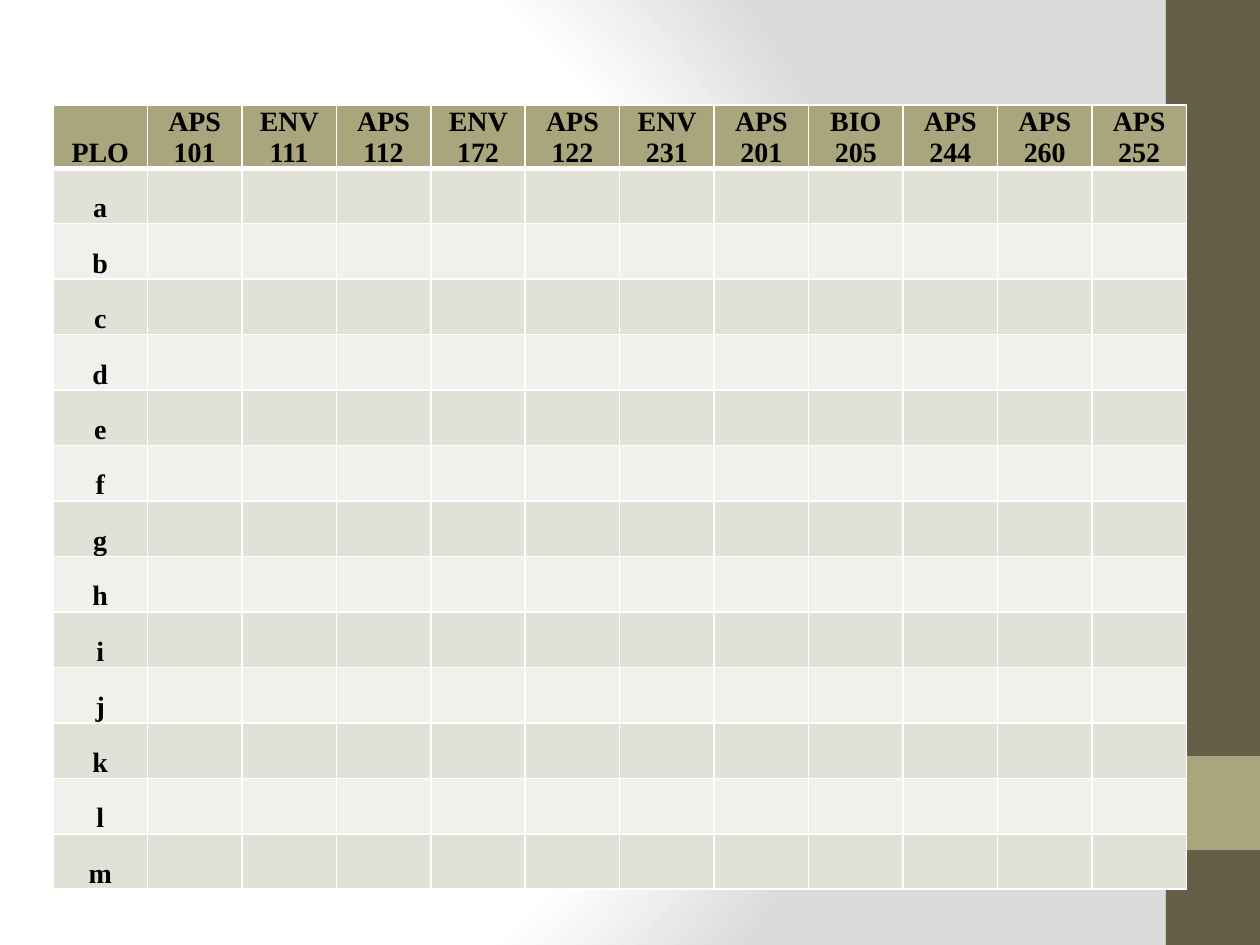
import pptx
import pptx.dml.color
import pptx.enum.shapes
import pptx.enum.text
import pptx.oxml
import pptx.oxml.ns
import pptx.util
from dataclasses import dataclass

PX = 914400 // 126  # EMU in one px


def px(n):
    return pptx.util.Emu(round(n * PX))


def rgb(value):
    return pptx.dml.color.RGBColor.from_string(value)


@dataclass(frozen=True)
class Theme:
    font: str = "Times New Roman"
    size: int = 16
    text: str = "000000"
    white: str = "FFFFFF"
    shade: str = "DADADA"
    sidebar: str = "675E47"
    accent: str = "A9A57C"
    bands: tuple = ("E2E1D7", "F1F0EC")
    rule: int = 1
    header_rule: int = 3


def write(tf, text, *, font, size, color, bold=False,
          align=pptx.enum.text.PP_ALIGN.CENTER):
    p = tf.paragraphs[0]
    p.alignment = align
    r = p.add_run()
    r.text = text
    r.font.name = font
    r.font.size = pptx.util.Pt(size)
    r.font.bold = bold
    r.font.color.rgb = rgb(color)


class SlideBuilder:
    def __init__(self, slide, theme):
        self.s = slide
        self.theme = theme

    def background(self, stops):
        """Radial gradient; stops are (percent, colour) pairs."""
        self.s.background.fill.gradient()
        old = self.s.element.find(".//" + pptx.oxml.ns.qn("a:gradFill"))
        gs = "".join(f'<a:gs pos="{pos * 1000}"><a:srgbClr val="{color}"/></a:gs>'
                     for pos, color in stops)
        new = pptx.oxml.parse_xml(
            f'<a:gradFill {pptx.oxml.ns.nsdecls("a")} rotWithShape="1">'
            f'<a:gsLst>{gs}</a:gsLst><a:path path="circle">'
            '<a:fillToRect l="20000" t="50000" r="100000" b="50000"/>'
            '</a:path></a:gradFill>')
        old.getparent().replace(old, new)

    def rect(self, x, y, w, h, color):
        sp = self.s.shapes.add_shape(
            pptx.enum.shapes.MSO_SHAPE.RECTANGLE, px(x), px(y), px(w), px(h))
        sp.shadow.inherit = False
        sp.fill.solid()
        sp.fill.fore_color.rgb = rgb(color)
        sp.line.fill.background()

    def borders(self, cell, **widths):
        """Border widths in points, keyed by side: L, R, T, B."""
        tc_pr = cell._tc.get_or_add_tcPr()
        for i, side in enumerate("LRTB"):
            width = pptx.util.Pt(widths.get(side, self.theme.rule))
            tc_pr.insert(i, pptx.oxml.parse_xml(
                f'<a:ln{side} {pptx.oxml.ns.nsdecls("a")} w="{width}"><a:solidFill>'
                f'<a:srgbClr val="{self.theme.white}"/></a:solidFill></a:ln{side}>'))

    def cell(self, cell, text, color, **widths):
        t = self.theme
        cell.fill.solid()
        cell.fill.fore_color.rgb = rgb(color)
        cell.vertical_anchor = pptx.enum.text.MSO_ANCHOR.BOTTOM
        cell.margin_left = cell.margin_right = cell.margin_top = px(1)
        cell.margin_bottom = 0
        if text:
            write(cell.text_frame, text, font=t.font, size=t.size,
                  color=t.text, bold=True)
        self.borders(cell, **widths)

    def table(self, x, y, w, header_h, body_h, header, labels):
        t = self.theme
        n_rows, n_cols = len(labels) + 1, len(header)
        table = self.s.shapes.add_table(
            n_rows, n_cols, px(x), px(y), px(w), px(header_h + body_h)).table
        table.first_row = table.horz_banding = False
        for col in table.columns:
            col.width = px(w) // n_cols
        for row in table.rows:
            row.height = px(body_h) // len(labels)
        table.rows[0].height = px(header_h)

        for c, text in enumerate(header):
            self.cell(table.cell(0, c), text, t.accent, B=t.header_rule)
        for r, label in enumerate(labels):
            top = t.rule if r else t.header_rule
            for c in range(n_cols):
                self.cell(table.cell(r + 1, c), "" if c else label,
                          t.bands[r % 2], T=top)


def main():
    prs = pptx.Presentation()
    prs.slide_width, prs.slide_height = px(1260), px(945)
    theme = Theme()
    slide = SlideBuilder(prs.slides.add_slide(prs.slide_layouts[6]), theme)

    # Background and side bar
    slide.background([(0, theme.white), (75, theme.white), (100, theme.shade)])
    slide.rect(1166, 0, 94, 945, theme.sidebar)
    slide.rect(1166, 756, 94, 94, theme.accent)

    # Course matrix
    courses = ["APS 101", "ENV 111", "APS 112", "ENV 172", "APS 122", "ENV 231",
               "APS 201", "BIO 205", "APS 244", "APS 260", "APS 252"]
    slide.table(53, 105, 1134, 63, 721, ["PLO"] + courses, "abcdefghijklm")

    prs.save("out.pptx")


if __name__ == "__main__":
    main()
